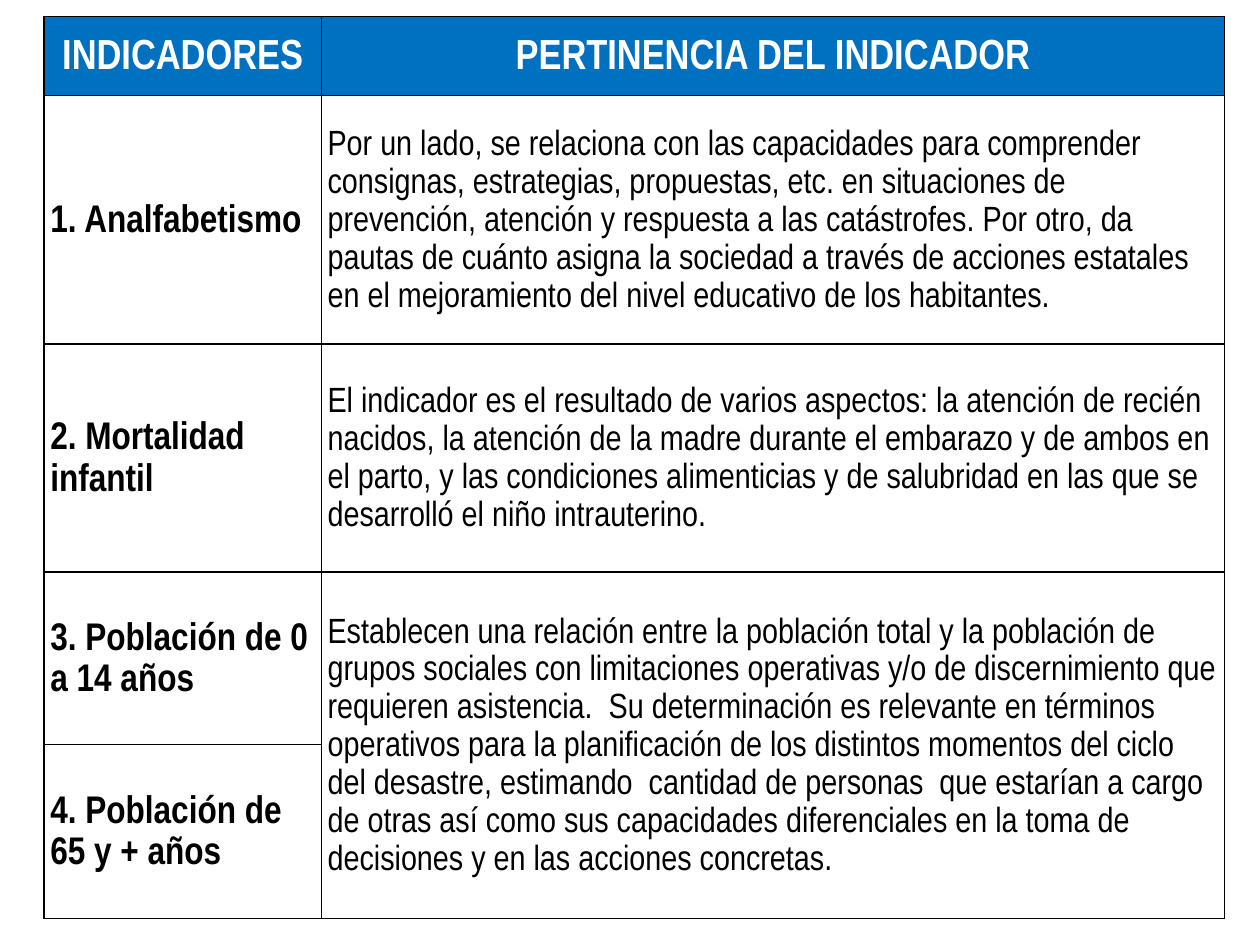
from lxml import etree
from pptx import Presentation
from pptx import util as u
from pptx.dml.color import RGBColor
from pptx.enum import text
from pptx.oxml.ns import qn

BLUE = RGBColor(0x00, 0x70, 0xC0)
WHITE = RGBColor(0xFF, 0xFF, 0xFF)
BLACK = RGBColor(0x00, 0x00, 0x00)
FONT = "Arial Narrow"

COLUMN_WIDTHS = [2.2, 7.17]
ROW_HEIGHTS = [0.63, 1.97, 1.81, 1.37, 1.38]
HEADINGS = ["INDICADORES", "PERTINENCIA DEL INDICADOR"]
INDICATORS = [
    ("1. Analfabetismo",
     "Por un lado, se relaciona con las capacidades para comprender consignas, "
     "estrategias, propuestas, etc. en situaciones de prevención, atención y "
     "respuesta a las catástrofes. Por otro, da pautas de cuánto asigna la "
     "sociedad a través de acciones estatales en el mejoramiento del nivel "
     "educativo de los habitantes."),
    ("2. Mortalidad infantil",
     "El indicador es el resultado de varios aspectos: la atención de recién "
     "nacidos, la atención de la madre durante el embarazo y de ambos en el "
     "parto, y las condiciones alimenticias y de salubridad en las que se "
     "desarrolló el niño intrauterino."),
    ("3. Población de 0 a 14 años",
     "Establecen una relación entre la población total y la población de "
     "grupos sociales con limitaciones operativas y/o de discernimiento que "
     "requieren asistencia.  Su determinación es relevante en términos "
     "operativos para la planificación de los distintos momentos del ciclo "
     "del desastre, estimando  cantidad de personas  que estarían a cargo de "
     "otras así como sus capacidades diferenciales en la toma de decisiones y "
     "en las acciones concretas."),
    ("4. Población de 65 y + años", None),
]


def set_borders(cell, color=BLACK, width=1):
    properties = cell._tc.get_or_add_tcPr()
    for position, side in enumerate(("lnL", "lnR", "lnT", "lnB")):
        line = etree.Element(qn(f"a:{side}"), w=str(u.Pt(width)))
        fill = etree.SubElement(line, qn("a:solidFill"))
        etree.SubElement(fill, qn("a:srgbClr"), val=str(color))
        properties.insert(position, line)


def format_cell(cell, fill):
    cell.fill.solid()
    cell.fill.fore_color.rgb = fill
    cell.vertical_anchor = text.MSO_ANCHOR.MIDDLE
    cell.margin_left = cell.margin_right = u.Inches(0.05)
    cell.margin_top = cell.margin_bottom = 0
    set_borders(cell)


def write_text(cell, content, size=20, bold=False, color=BLACK,
               align=text.PP_ALIGN.LEFT):
    paragraph = cell.text_frame.paragraphs[0]
    paragraph.alignment = align
    paragraph.line_spacing = 1.15
    paragraph.space_after = u.Pt(10)
    run = paragraph.add_run()
    run.text = content
    run.font.name = FONT
    run.font.size = u.Pt(size)
    run.font.bold = bold
    run.font.color.rgb = color


def add_indicator_table(slide, left, top, width, height):
    frame = slide.shapes.add_table(
        len(ROW_HEIGHTS), len(COLUMN_WIDTHS), left, top, width, height)
    table = frame.table
    table.first_row = table.horz_banding = False
    for column, share in zip(table.columns, COLUMN_WIDTHS):
        column.width = int(width * share / sum(COLUMN_WIDTHS))
    for row, share in zip(table.rows, ROW_HEIGHTS):
        row.height = int(height * share / sum(ROW_HEIGHTS))
    for row_index, row in enumerate(table.rows):
        for cell in row.cells:
            format_cell(cell, WHITE if row_index else BLUE)

    table.cell(3, 1).merge(table.cell(4, 1))
    for column_index, heading in enumerate(HEADINGS):
        write_text(table.cell(0, column_index), heading, size=24, bold=True,
                   color=WHITE, align=text.PP_ALIGN.CENTER)
    for row_index, (name, relevance) in enumerate(INDICATORS, start=1):
        write_text(table.cell(row_index, 0), name, size=22, bold=True)
        if relevance:
            write_text(table.cell(row_index, 1), relevance)


def main():
    presentation = Presentation()
    presentation.slide_width = u.Inches(10)
    presentation.slide_height = u.Inches(7.5)
    slide = presentation.slides.add_slide(presentation.slide_layouts[6])
    add_indicator_table(slide, u.Inches(0.35), u.Inches(0.13),
                        u.Inches(sum(COLUMN_WIDTHS)),
                        u.Inches(sum(ROW_HEIGHTS)))
    presentation.save("out.pptx")


if __name__ == "__main__":
    main()
